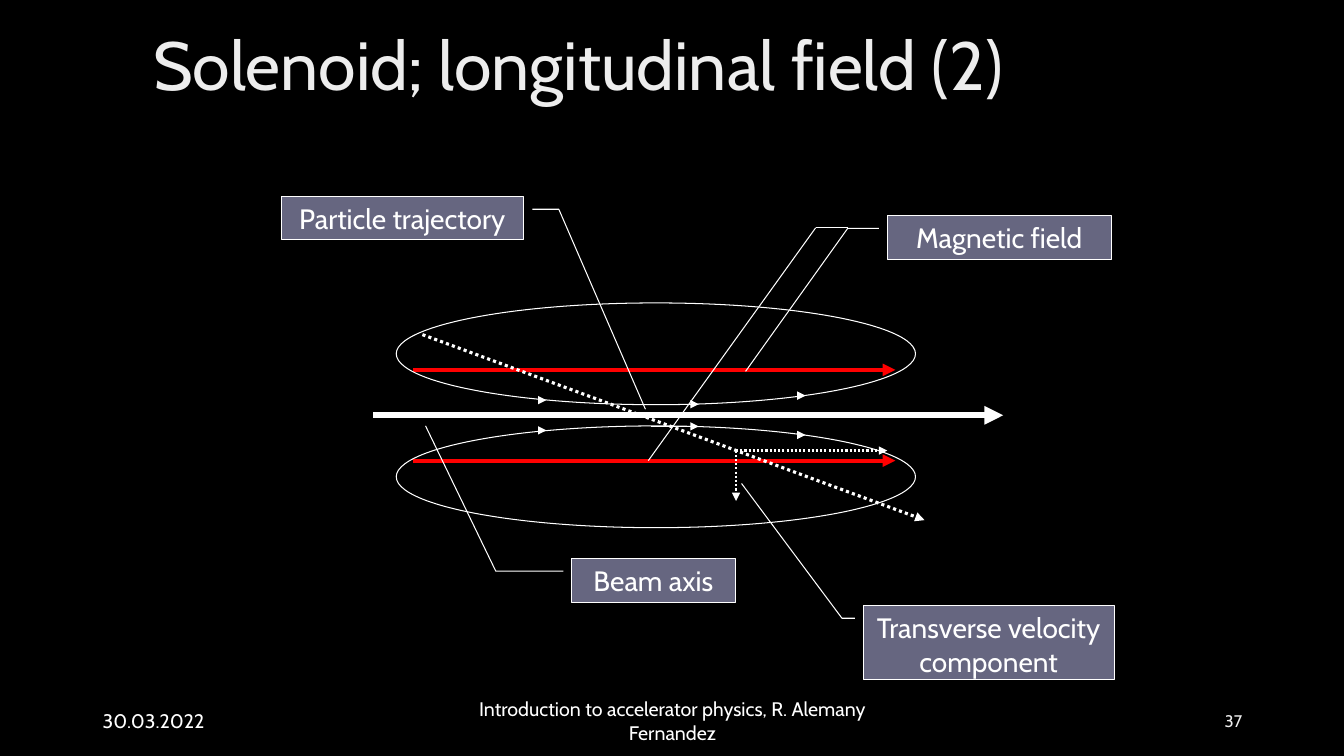
import pptx
import pptx.util
import pptx.dml.color
import pptx.enum.shapes
import pptx.enum.text
import pptx.oxml
import pptx.oxml.ns
from lxml import etree

RGB = pptx.dml.color.RGBColor
BLACK = RGB(0x00, 0x00, 0x00)
WHITE = RGB(0xFF, 0xFF, 0xFF)
SILVER = RGB(0xED, 0xED, 0xED)
RED = RGB(0xFF, 0x00, 0x00)
LILAC = RGB(0xCC, 0xCC, 0xFF)
FONT = "Cabin"
LEFT, CENTER, RIGHT = (
    pptx.enum.text.PP_ALIGN.LEFT,
    pptx.enum.text.PP_ALIGN.CENTER,
    pptx.enum.text.PP_ALIGN.RIGHT,
)
SHAPES = pptx.enum.shapes.MSO_SHAPE
ANCHOR = pptx.enum.text.MSO_ANCHOR

COLUMNS, ROWS = 1333, 750
CELL = pptx.util.Inches(0.01)

FOOTER_ROW, FOOTER_HEIGHT = 695, 40
CAPTIONS = [
    ("Solenoid; longitudinal field (2)", (142, 27, 997, 82), 48.6, SILVER, LEFT),
    ("30.03.2022", (92, FOOTER_ROW, 300, FOOTER_HEIGHT), 14, WHITE, LEFT),
    ("Introduction to accelerator physics, R. Alemany Fernandez",
     (442, FOOTER_ROW, 450, FOOTER_HEIGHT), 14, WHITE, CENTER),
    ("37", (942, FOOTER_ROW, 300, FOOTER_HEIGHT), 12, SILVER, RIGHT),
]

CALLOUTS = [
    ("Magnetic field", (880, 214, 222, 43),
     (0.294, -0.038, 0.294, -0.177, 3.592, -0.633)),
    ("Particle trajectory", (279, 195, 240, 43),
     (0.294, 1.038, 0.294, 1.147, 4.91, 1.505)),
    ("Beam axis", (567, 554, 162, 44),
     (0.287, -0.051, 0.287, -0.465, -2.988, -0.895)),
    ("Transverse velocity component", (856, 601, 249, 73),
     (0.17, -0.033, 0.17, -0.084, -1.662, -0.484)),
]

AXIS_ROW = 412
BEAM_SPAN = (370, 995)
FIELD_SPAN, FIELD_OFFSET = (410, 888), 45
LOOP_LEFT, LOOP_WIDTH, LOOP_HEIGHT, LOOP_OFFSET = 393, 515, 101, 61
LOOP_MARKS = [(646, 693, 11), (791, 799, 19.5), (535, 542, 15)]
TRAJECTORY = (419, 332, 917, 516)
VELOCITY_ORIGIN = (730, 447)
VELOCITY_STEPS = [(150, 0), (0, 50)]
SECOND_LEADER = [(841, 226), (809, 226), (643, 457)]


def cells(values):
    return [round(value * CELL) for value in values]


def write(shape, text, size, color, align, anchor):
    frame = shape.text_frame
    frame.word_wrap = True
    frame.vertical_anchor = anchor
    frame.text = text
    paragraph = frame.paragraphs[0]
    paragraph.alignment = align
    font = paragraph.runs[0].font
    font.name = FONT
    font.size = pptx.util.Pt(size)
    font.color.rgb = color
    return paragraph


def draw_line(slide, ends, width=0.75, color=WHITE, dotted=False, arrow=False):
    line = slide.shapes.add_connector(
        pptx.enum.shapes.MSO_CONNECTOR.STRAIGHT, *cells(ends))
    line.line.color.rgb = color
    line.line.width = pptx.util.Pt(width)
    if dotted:
        line.line.dash_style = pptx.enum.dml.MSO_LINE.ROUND_DOT
    properties = line._element.spPr
    if arrow:
        outline = properties.find(pptx.oxml.ns.qn("a:ln"))
        etree.SubElement(outline, pptx.oxml.ns.qn("a:tailEnd"), type="triangle")
    etree.SubElement(properties, pptx.oxml.ns.qn("a:effectLst"))


def draw_outline(slide, kind, box):
    shape = slide.shapes.add_shape(kind, *cells(box))
    shape.shadow.inherit = False
    shape.line.color.rgb = WHITE
    shape.line.width = pptx.util.Pt(0.75)
    return shape


def draw_callout(slide, text, box, leader):
    callout = draw_outline(slide, SHAPES.LINE_CALLOUT_2, box)
    for index, share in enumerate(leader):
        callout.adjustments[index] = share
    callout.fill.solid()
    callout.fill.fore_color.rgb = LILAC
    tint = callout._element.spPr.find(
        pptx.oxml.ns.qn("a:solidFill")).find(pptx.oxml.ns.qn("a:srgbClr"))
    etree.SubElement(tint, pptx.oxml.ns.qn("a:alpha"), val="50000")
    write(callout, text, 20, WHITE, CENTER, ANCHOR.TOP)


def main():
    deck = pptx.Presentation()
    deck.slide_width, deck.slide_height = cells((COLUMNS, ROWS))
    slide = deck.slides.add_slide(deck.slide_layouts[6])
    slide.background.fill.solid()
    slide.background.fill.fore_color.rgb = BLACK

    for text, box, size, color, align in CAPTIONS:
        caption = slide.shapes.add_textbox(*cells(box))
        paragraph = write(caption, text, size, color, align, ANCHOR.MIDDLE)
        if text == CAPTIONS[0][0]:
            paragraph.line_spacing = 0.9

    start, end = BEAM_SPAN
    draw_line(slide, (start, AXIS_ROW, end, AXIS_ROW), 4.5, arrow=True)
    start, end = FIELD_SPAN
    for side in (-1, 1):
        row = AXIS_ROW + side * FIELD_OFFSET
        draw_line(slide, (start, row, end, row), 3, RED, arrow=True)

    draw_line(slide, TRAJECTORY, 2.25, dotted=True, arrow=True)
    column, row = VELOCITY_ORIGIN
    for across, down in VELOCITY_STEPS:
        draw_line(slide, (column, row, column + across, row + down),
                  1.5, dotted=True, arrow=True)

    for callout in CALLOUTS:
        draw_callout(slide, *callout)
    for begin, finish in zip(SECOND_LEADER, SECOND_LEADER[1:]):
        draw_line(slide, begin + finish)

    for side in (-1, 1):
        top = AXIS_ROW + side * LOOP_OFFSET - LOOP_HEIGHT / 2
        loop = draw_outline(slide, SHAPES.OVAL,
                            (LOOP_LEFT, top, LOOP_WIDTH, LOOP_HEIGHT))
        loop.fill.background()
        for start, end, offset in LOOP_MARKS:
            row = AXIS_ROW + side * offset
            draw_line(slide, (start, row, end, row), arrow=True)

    deck.save("out.pptx")


if __name__ == "__main__":
    main()
